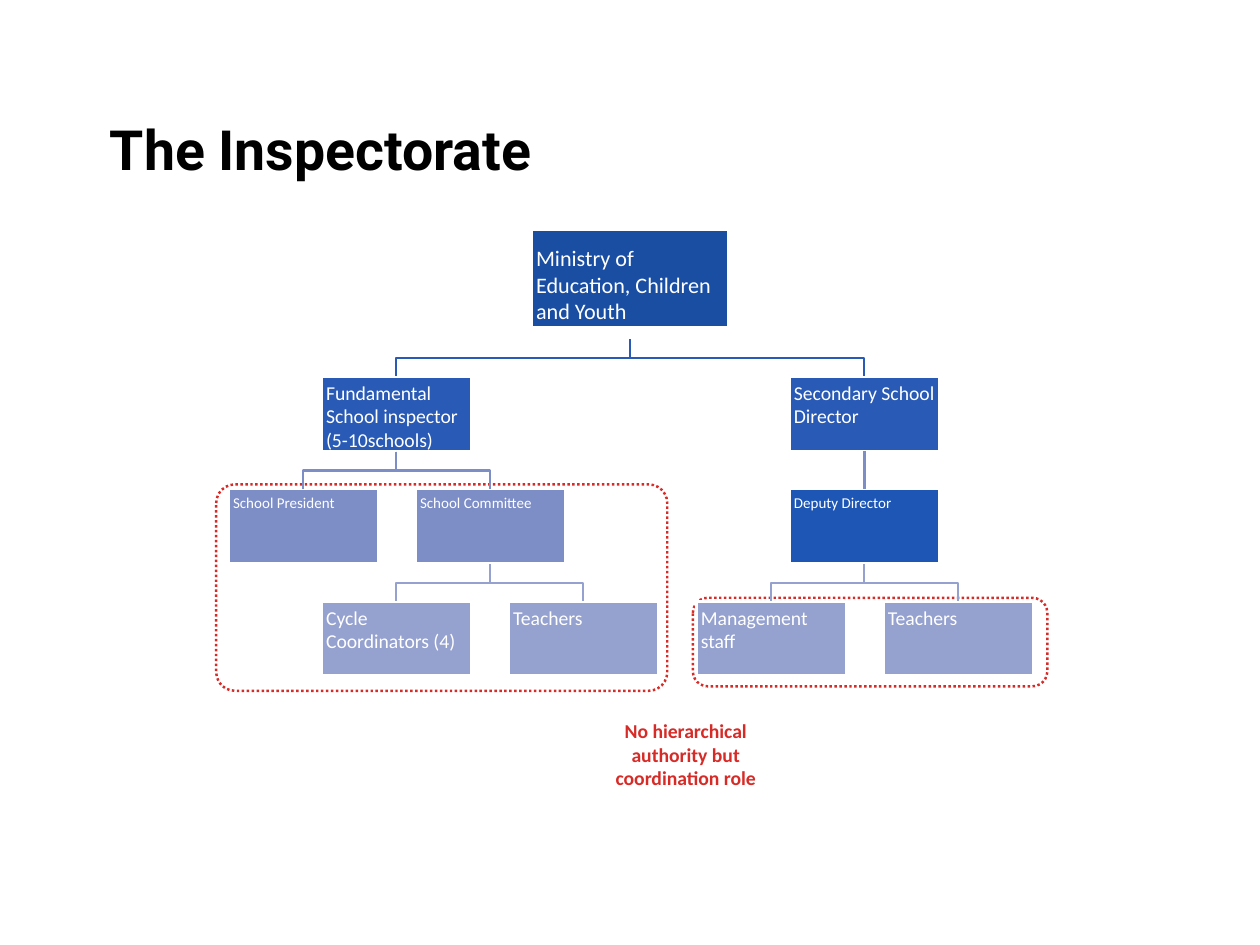
"""Build the organisation chart slide of the Inspectorate."""
import pptx
import pptx.util
import pptx.dml.color
import pptx.enum.dml
import pptx.enum.shapes
import pptx.enum.text
import pptx.oxml.ns
import lxml.etree

PX = 9144
WIDE, HIGH = 169, 84
ROWS = [425, 552, 679]
DROP = 42
WHITE, RED = "FFFFFF", "D72B27"
NAVY, DEEP, BLUE = "1A4EA3", "1D56B4", "295AB5"
TINTS = [BLUE, "7D8DC6", "95A1CE"]
SHAPE = pptx.enum.shapes.MSO_SHAPE
ALIGN = pptx.enum.text.PP_ALIGN
ANCHOR = pptx.enum.text.MSO_ANCHOR


def px(*nums):
    return [pptx.util.Emu(num * PX) for num in nums]


def tint(code):
    return pptx.dml.color.RGBColor.from_string(code)


def column(index):
    return round(341.6 + 105.6 * index)


def stroke(line, color):
    line.color.rgb = tint(color)
    line.width = pptx.util.Pt(2)


def write(shape, text, size=16, color=WHITE, font="Calibri", bold=False,
          align=ALIGN.LEFT, anchor=ANCHOR.TOP, inset=5, top=None):
    frame = shape.text_frame
    frame.word_wrap = True
    frame.auto_size = pptx.enum.text.MSO_AUTO_SIZE.NONE
    frame.vertical_anchor = anchor
    frame.margin_left, frame.margin_right, frame.margin_bottom = px(inset) * 3
    frame.margin_top = px(inset if top is None else top)[0]
    para = frame.paragraphs[0]
    para.alignment = align
    run = para.add_run()
    run.text = text
    run.font.size = pptx.util.Pt(size)
    run.font.name = font
    run.font.bold = bold
    run.font.color.rgb = tint(color)


def block(slide, kind, area, fill, edge):
    shape = slide.shapes.add_shape(kind, *px(*area))
    shape.shadow.inherit = False
    shape.fill.solid()
    shape.fill.fore_color.rgb = tint(fill)
    stroke(shape.line, edge)
    return shape


def zone(slide, area, curve):
    shape = block(slide, SHAPE.ROUNDED_RECTANGLE, area, WHITE, RED)
    shape.adjustments[0] = curve
    shape.line.dash_style = pptx.enum.dml.MSO_LINE.ROUND_DOT


def node(slide, text, index, row, size=16, fill=None):
    area = (column(index) - WIDE // 2, ROWS[row], WIDE, HIGH)
    shape = block(slide, SHAPE.RECTANGLE, area, fill or TINTS[row], WHITE)
    write(shape, text, size=size)
    return shape


def branch(slide, start, ends, row):
    foot = ROWS[row]
    for end in ends:
        pen = slide.shapes.build_freeform(start, foot - DROP, scale=PX)
        bend = foot - DROP // 2
        pen.add_line_segments(
            [(start, bend), (end, bend), (end, foot)], close=False)
        shape = pen.convert_to_shape()
        shape.shadow.inherit = False
        shape.fill.background()
        stroke(shape.line, TINTS[row])


def join(slide, upper, lower, color):
    line = slide.shapes.add_connector(
        pptx.enum.shapes.MSO_CONNECTOR.STRAIGHT, 0, 0, 0, 0)
    line.begin_connect(upper, 2)
    line.end_connect(lower, 0)
    stroke(line.line, color)
    lxml.etree.SubElement(
        line._element.spPr, pptx.oxml.ns.qn("a:effectLst"))


def head(slide, text):
    title = slide.shapes.title
    title.left, title.top, title.width, title.height = px(118, 49, 1200, 236)
    write(title, text, size=45, color="000000", font="Roboto", bold=True,
          anchor=ANCHOR.MIDDLE, inset=6)


def main():
    deck = pptx.Presentation()
    deck.slide_width, deck.slide_height = px(1422, 1067)
    slide = deck.slides.add_slide(deck.slide_layouts[5])
    head(slide, "The Inspectorate")

    zone(slide, (782, 675, 400, 100), 0.17)
    zone(slide, (244, 547, 509, 233), 0.09)

    top = block(slide, SHAPE.RECTANGLE, (600, 259, 222, 111), NAVY, WHITE)
    write(top, "Ministry of Education, Children and Youth", size=18, top=17)
    node(slide, "Fundamental School inspector (5-10schools)", 1, 0)
    chief = node(slide, "Secondary School Director", 6, 0)
    node(slide, "School President", 0, 1, size=12.2)
    node(slide, "School Committee", 2, 1, size=12.2)
    deputy = node(slide, "Deputy Director", 6, 1, size=12.2, fill=DEEP)
    staff = [("Cycle Coordinators (4)", 1), ("Teachers", 3),
             ("Management staff", 5), ("Teachers", 7)]
    for text, index in staff:
        node(slide, text, index, 2)

    branch(slide, 711, [column(1), column(6)], 0)
    branch(slide, column(1), [column(0), column(2)], 1)
    branch(slide, column(2), [column(1), column(3)], 2)
    branch(slide, column(6), [column(5), column(7)], 2)
    join(slide, chief, deputy, TINTS[1])

    note = slide.shapes.add_textbox(*px(676, 807, 196, 89))
    write(note, "No hierarchical authority but coordination role",
          color=RED, bold=True, align=ALIGN.CENTER)
    deck.save("out.pptx")


if __name__ == "__main__":
    main()
